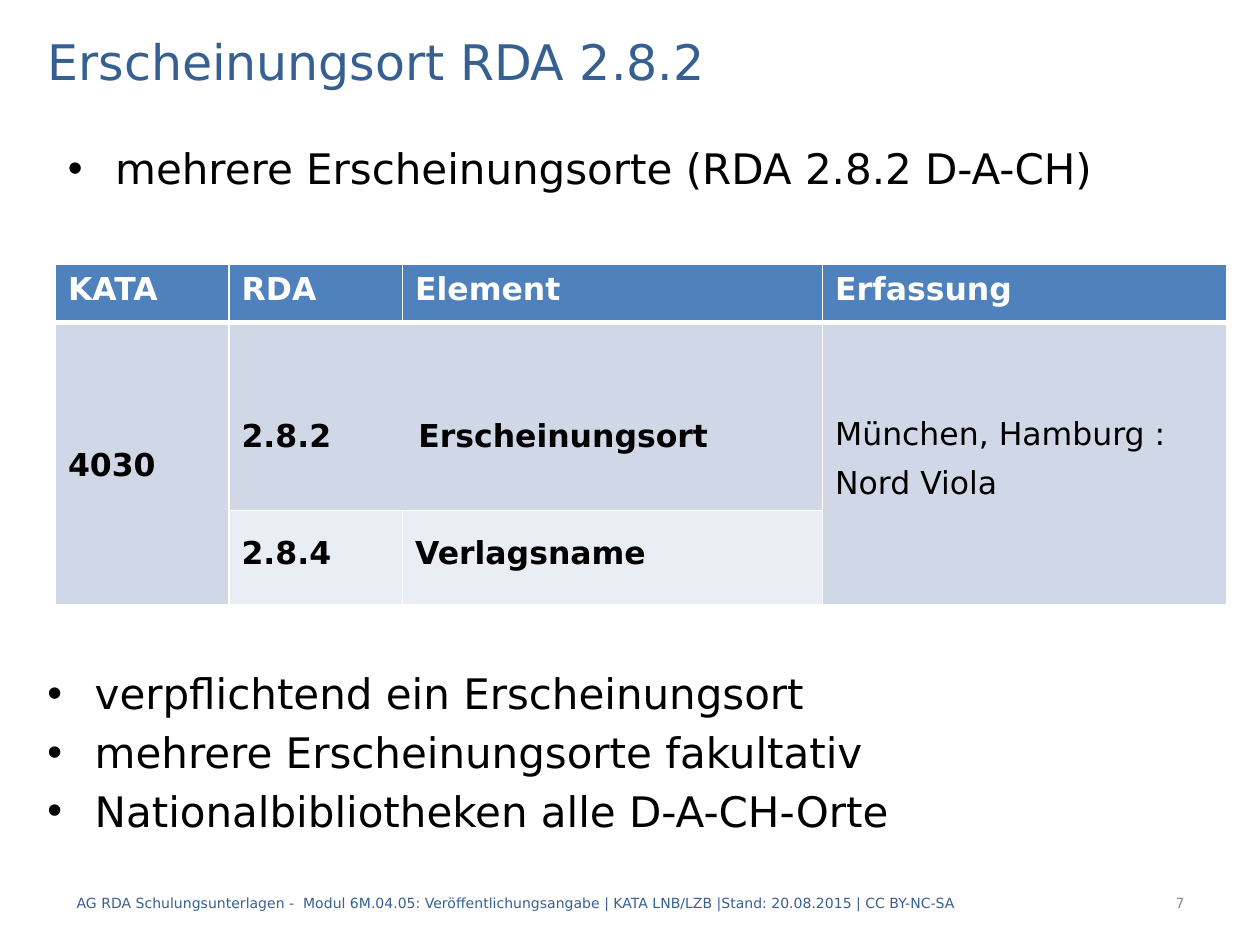
from dataclasses import dataclass

from lxml.etree import SubElement
from pptx import Presentation
from pptx.dml.color import RGBColor
from pptx.enum.text import MSO_ANCHOR, MSO_AUTO_SIZE, PP_ALIGN
from pptx.oxml import parse_xml
from pptx.oxml.ns import nsdecls, qn
from pptx.util import Pt


@dataclass(frozen=True)
class Theme:
    """Colours, font and type sizes of the slide."""
    font: str = "DejaVu Sans"
    accent: str = "376092"
    ink: str = "000000"
    grey: str = "8C8C8C"
    white: str = "FFFFFF"
    header: str = "4F81BD"
    band: str = "D0D8E8"
    pale: str = "E9EDF4"
    title: int = 28
    body: int = 24
    cell: int = 18
    small: int = 8


T = Theme()


def assign(obj, values):
    """Set each attribute named in values."""
    for name, value in values.items():
        setattr(obj, name, value)


def write(tf, lines, size, color, bold=False, **spacing):
    """Write lines as formatted paragraphs and return them."""
    for i, line in enumerate(lines):
        p = tf.paragraphs[0] if i == 0 else tf.add_paragraph()
        assign(p, {"alignment": PP_ALIGN.LEFT, **spacing})
        r = p.add_run()
        r.text = line
        assign(r.font, {"name": T.font, "size": Pt(size), "bold": bold})
        r.font.color.rgb = RGBColor.from_string(color)
    return tf.paragraphs


def add_text(s, box, lines, size, color, anchor=MSO_ANCHOR.TOP, **spacing):
    """Add a wrapped text box and return its paragraphs."""
    tf = s.shapes.add_textbox(*map(Pt, box)).text_frame
    assign(tf, {"word_wrap": True, "vertical_anchor": anchor})
    return write(tf, lines, size, color, **spacing)


def add_title(s, box, text):
    """Place and format the title placeholder."""
    sp = s.shapes.title
    assign(sp, dict(zip(("left", "top", "width", "height"), map(Pt, box))))
    tf = sp.text_frame
    assign(tf, {"word_wrap": True, "auto_size": MSO_AUTO_SIZE.NONE,
                "vertical_anchor": MSO_ANCHOR.MIDDLE})
    write(tf, [text], T.title, T.accent)


def add_bullets(s, box, lines):
    """Add a bulleted list with a hanging indent."""
    for p in add_text(s, box, lines, T.body, T.ink, space_before=Pt(4.8)):
        pPr = p._p.get_or_add_pPr()
        pPr.set("marL", str(Pt(27)))
        pPr.set("indent", str(-Pt(27)))
        SubElement(pPr, qn("a:buFont"), typeface="Arial")
        SubElement(pPr, qn("a:buChar"), char="•")


def style_cell(cell, fill, widths):
    """Fill a cell and draw its left, right, top and bottom borders."""
    cell.fill.solid()
    cell.fill.fore_color.rgb = RGBColor.from_string(fill)
    for i, (side, width) in enumerate(zip("LRTB", widths)):
        cell._tc.get_or_add_tcPr().insert(i, parse_xml(
            f'<a:ln{side} {nsdecls("a")} w="{Pt(width)}"><a:solidFill>'
            f'<a:srgbClr val="{T.white}"/></a:solidFill></a:ln{side}>'))


def add_table(s, box):
    """Add the cataloguing table with its merged cells."""
    table = s.shapes.add_table(3, 4, *map(Pt, box)).table
    for column, width in zip(table.columns, (99.2, 99.2, 240, 231.2)):
        column.width = Pt(width)
    for row, height in zip(table.rows, (33, 107.4, 54)):
        row.height = Pt(height)
    for r, fill in enumerate((T.header, T.band, T.pale)):
        for c in range(4):
            merged = r == 2 and c in (0, 3)
            style_cell(table.cell(r, c), T.band if merged else fill,
                       (1, 1, 3 if r == 1 else 1, 3 if r == 0 else 1))
    for start, end in (((1, 0), (2, 0)), ((1, 1), (1, 2)), ((1, 3), (2, 3))):
        table.cell(*start).merge(table.cell(*end))

    for c, text in enumerate(("KATA", "RDA", "Element", "Erfassung")):
        write(table.cell(0, c).text_frame, [text], T.cell, T.white, True)
    spacing = {"line_spacing": Pt(16), "space_before": Pt(6), "space_after": Pt(6)}
    entries = (
        (1, 0, ["4030"], True, 11),
        (1, 1, ["2.8.2\tErscheinungsort"], True, 31.6),
        (1, 3, ["München, Hamburg :", "Nord Viola"], False, 3.6),
        (2, 1, ["2.8.4"], True, 3.6),
        (2, 2, ["Verlagsname"], True, 3.6),
    )
    for r, c, lines, bold, top in entries:
        cell = table.cell(r, c)
        assign(cell, {"vertical_anchor": MSO_ANCHOR.MIDDLE, "margin_top": Pt(top)})
        write(cell.text_frame, lines, T.cell, T.ink, bold, **spacing)
    pPr = table.cell(1, 1).text_frame.paragraphs[0]._p.get_or_add_pPr()
    SubElement(SubElement(pPr, qn("a:tabLst")), qn("a:tab"),
               pos=str(Pt(101)), algn="l")


def add_footer(s, box, text, number):
    """Add the footer line and the slide number at its right end."""
    x, y, w, h = box
    add_text(s, (x, y, 601, h), [text], T.small, T.accent, MSO_ANCHOR.MIDDLE)
    add_text(s, (x + w - 114.5, y, 114.5, h), [number], T.small, T.grey,
             MSO_ANCHOR.MIDDLE, alignment=PP_ALIGN.RIGHT)


def main():
    """Build and save the slide."""
    prs = Presentation()
    assign(prs, {"slide_width": Pt(720), "slide_height": Pt(540)})
    s = prs.slides.add_slide(prs.slide_layouts[5])
    add_title(s, (20, 14.4, 680.4, 40.3), "Erscheinungsort RDA 2.8.2")
    add_bullets(s, (20, 378, 680.4, 96.5), [
        "verpflichtend ein Erscheinungsort",
        "mehrere Erscheinungsorte fakultativ",
        "Nationalbibliotheken alle D-A-CH-Orte",
    ])
    add_footer(s, (36.7, 501.8, 647.3, 28.8),
               "AG RDA Schulungsunterlagen -  Modul 6M.04.05: "
               "Veröffentlichungsangabe | KATA LNB/LZB |Stand: 20.08.2015 | "
               "CC BY-NC-SA", "7")
    add_bullets(s, (31.7, 77.8, 680.4, 51),
                ["mehrere Erscheinungsorte (RDA 2.8.2 D-A-CH)"])
    add_table(s, (31.7, 151.2, 669.6, 194.4))
    prs.save("out.pptx")


if __name__ == "__main__":
    main()
